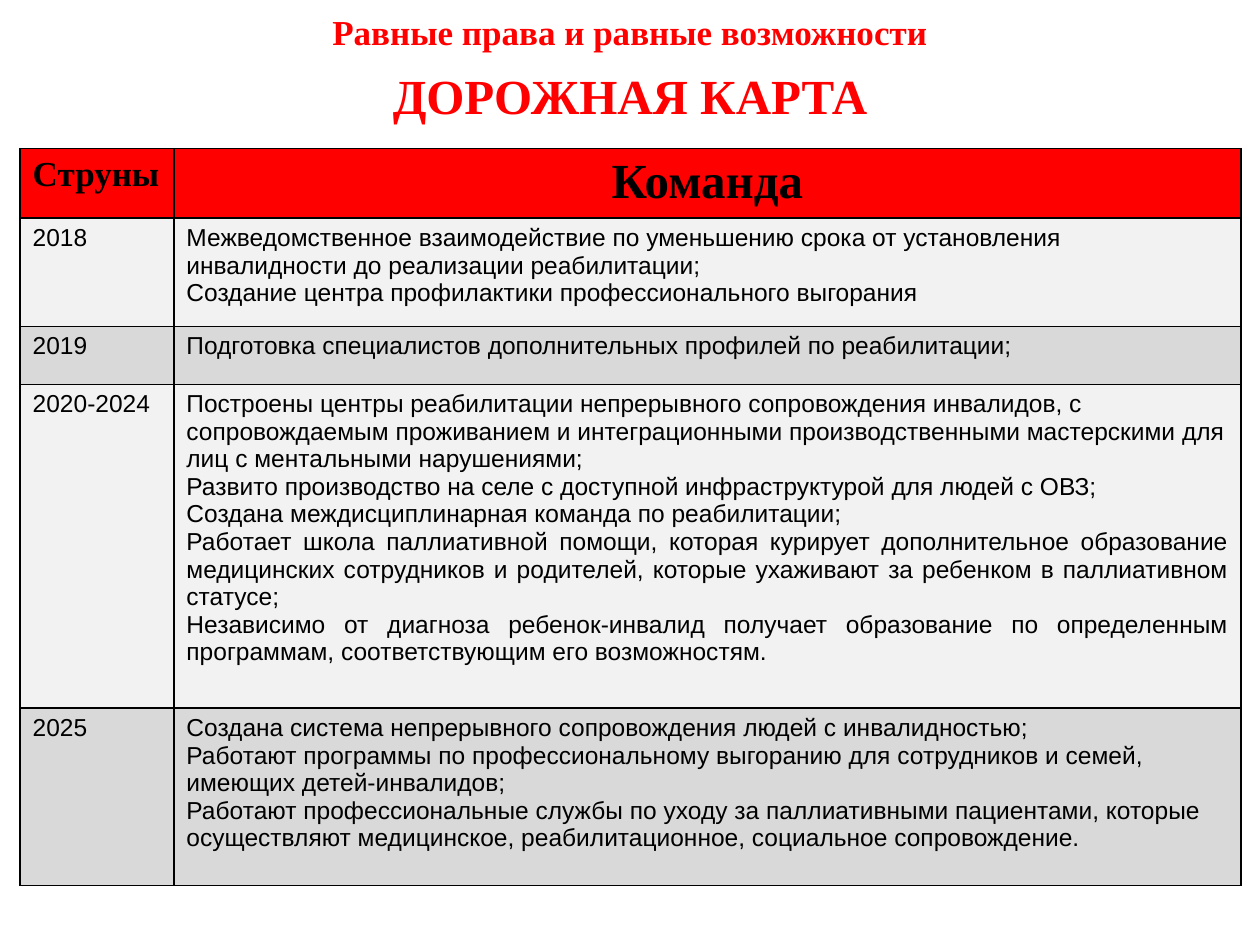
import pptx
import pptx.util
import pptx.dml.color
import pptx.enum.text
import pptx.oxml
from pptx.oxml.ns import qn

Inches, Pt = pptx.util.Inches, pptx.util.Pt
Align, Anchor = pptx.enum.text.PP_ALIGN, pptx.enum.text.MSO_ANCHOR

THEME = {
    "red": "FF0000", "black": "000000", "bands": ["F2F2F2", "D9D9D9"],
    "serif": "Times New Roman", "sans": "Arial",
    "small": 14, "medium": 20, "large": 28,
}
LEFT, CENTER, JUSTIFY = Align.LEFT, Align.CENTER, Align.JUSTIFY
COLUMNS = [1.22, 8.47]
ROWS = [0.55, 0.86, 0.46, 2.57, 1.41]

ROADMAP = [
    ("2018", [
        ("Межведомственное взаимодействие по уменьшению срока от установления", LEFT),
        ("инвалидности до реализации реабилитации;", JUSTIFY),
        ("Создание центра профилактики профессионального выгорания", LEFT)]),
    ("2019", [
        ("Подготовка специалистов дополнительных профилей по реабилитации;", LEFT)]),
    ("2020-2024", [
        ("Построены центры реабилитации непрерывного сопровождения инвалидов, с "
         "сопровождаемым проживанием и интеграционными производственными мастерскими "
         "для лиц с ментальными нарушениями;", LEFT),
        ("Развито производство на селе с доступной инфраструктурой для людей с ОВЗ;", LEFT),
        ("Создана междисциплинарная команда по реабилитации;", LEFT),
        ("Работает школа паллиативной помощи, которая курирует дополнительное "
         "образование медицинских сотрудников и родителей, которые ухаживают за "
         "ребенком в паллиативном статусе;", JUSTIFY),
        ("Независимо от диагноза ребенок-инвалид получает образование по "
         "определенным программам, соответствующим его возможностям.", JUSTIFY)]),
    ("2025", [
        ("Создана система непрерывного сопровождения людей с инвалидностью;", LEFT),
        ("Работают программы по профессиональному выгоранию для сотрудников и семей, "
         "имеющих детей-инвалидов;", LEFT),
        ("Работают профессиональные службы по уходу за паллиативными пациентами, "
         "которые осуществляют медицинское, реабилитационное, социальное "
         "сопровождение.", LEFT)]),
]


def write(frame, lines, color, face, bold):
    """Fill a text frame with (text, alignment, size) lines."""
    for index, (text, alignment, size) in enumerate(lines):
        para = frame.add_paragraph() if index else frame.paragraphs[0]
        para.alignment = alignment
        span = para.add_run()
        span.text = text
        for name, value in {"name": face, "size": Pt(size), "bold": bold}.items():
            setattr(span.font, name, value)
        span.font.color.rgb = pptx.dml.color.RGBColor.from_string(color)


def paint(cell, color):
    """Give a cell its fill and a thin border on every side."""
    properties = cell._tc.get_or_add_tcPr()
    for side in ("a:lnL", "a:lnR", "a:lnT", "a:lnB"):
        line = pptx.oxml.xmlchemy.OxmlElement(side)
        line.set("w", str(Pt(1)))
        fill = pptx.oxml.xmlchemy.OxmlElement("a:solidFill")
        shade = pptx.oxml.xmlchemy.OxmlElement("a:srgbClr")
        shade.set("val", THEME["black"])
        fill.append(shade)
        line.append(fill)
        properties.append(line)
    cell.fill.solid()
    cell.fill.fore_color.rgb = pptx.dml.color.RGBColor.from_string(color)


deck = pptx.Presentation()
deck.slide_width, deck.slide_height = Inches(10), Inches(7.5)
page = deck.slides.add_slide(deck.slide_layouts[5])

# Title
title = page.shapes.title
for name, value in {"left": 0.51, "top": 0.16, "width": 8.98, "height": 0.75}.items():
    setattr(title, name, Inches(value))
for name, value in {"vertical_anchor": Anchor.MIDDLE, "word_wrap": True,
                    "auto_size": pptx.enum.text.MSO_AUTO_SIZE.NONE}.items():
    setattr(title.text_frame, name, value)
write(title.text_frame,
      [("Равные права и равные возможности", CENTER, THEME["medium"]),
       ("ДОРОЖНАЯ КАРТА", CENTER, THEME["large"])],
      THEME["red"], THEME["serif"], True)
for para, gap in zip(title.text_frame.paragraphs, (0, 7)):
    para.space_before = Pt(gap)

# Table grid
table = page.shapes.add_table(
    len(ROWS), len(COLUMNS), Inches(0.16), Inches(1.18),
    Inches(sum(COLUMNS)), Inches(sum(ROWS))).table
for column, width in zip(table.columns, COLUMNS):
    column.width = Inches(width)
for row, height in zip(table.rows, ROWS):
    row.height = Inches(height)

# Header row
headings = [("Струны", LEFT, THEME["medium"]), ("Команда", CENTER, THEME["large"])]
for cell, heading in zip(table.rows[0].cells, headings):
    paint(cell, THEME["red"])
    write(cell.text_frame, [heading], THEME["black"], THEME["serif"], True)

# Year rows in alternating bands
for index, (year, goals) in enumerate(ROADMAP):
    for cell, lines in zip(table.rows[index + 1].cells, ([(year, LEFT)], goals)):
        paint(cell, THEME["bands"][index % 2])
        write(cell.text_frame, [(*line, THEME["small"]) for line in lines],
              THEME["black"], THEME["sans"], False)

deck.save("out.pptx")
